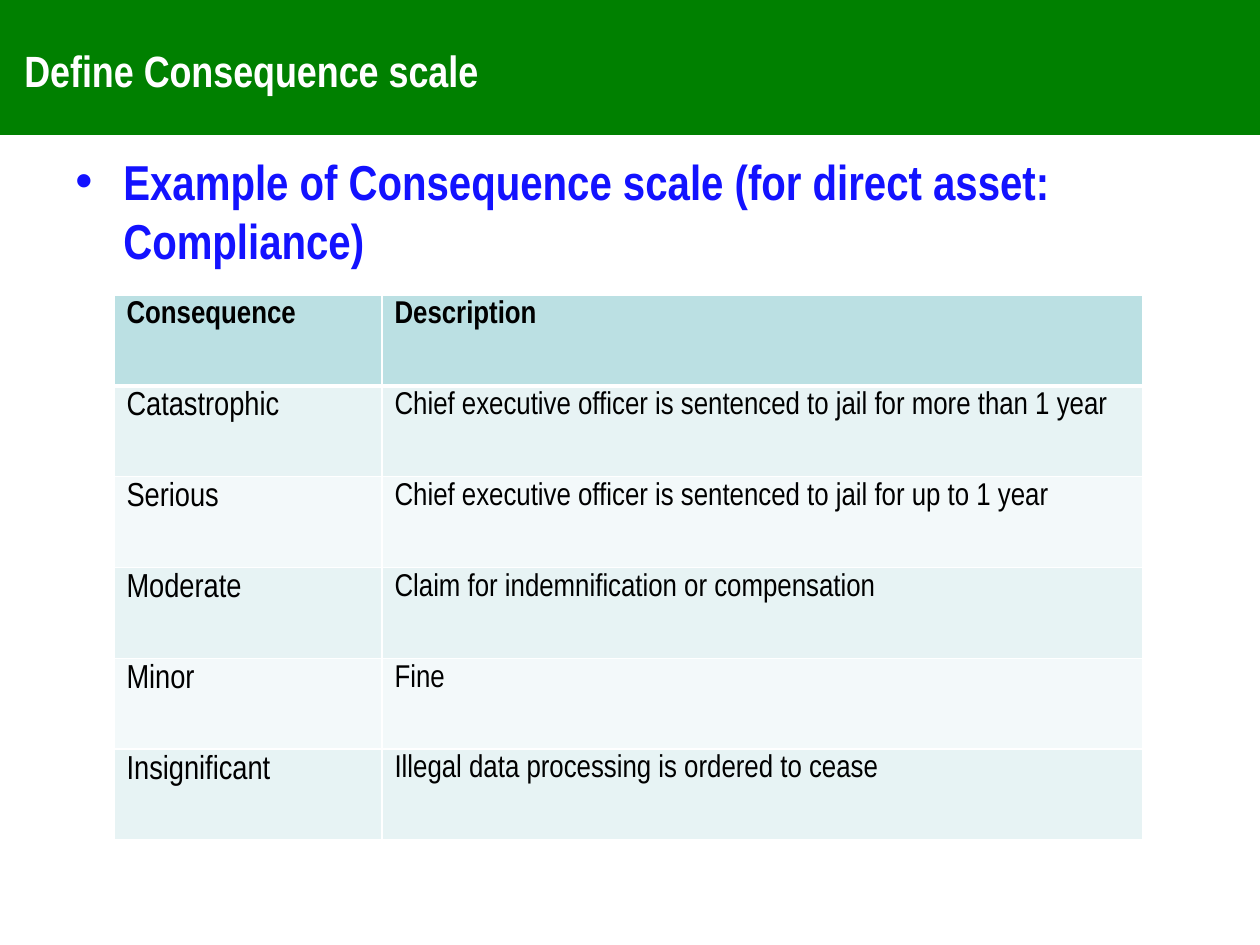
import pptx
import pptx.util
import pptx.dml.color
import pptx.enum.shapes
import pptx.enum.text
import pptx.oxml
import pptx.oxml.ns
from dataclasses import dataclass

SCALE = 914400 / 126


@dataclass(frozen=True)
class Theme:
    font: str = "Arial Narrow"
    green: str = "008000"
    blue: str = "1312FF"
    white: str = "FFFFFF"
    black: str = "000000"
    head: str = "BBE0E3"
    bands: tuple = ("E7F3F4", "F3F9FA")
    title: int = 25
    lead: int = 28
    label: int = 19
    cell: int = 18


THEME = Theme()

ROWS = [
    ("Consequence", "Description"),
    ("Catastrophic", "Chief executive officer is sentenced to jail for more than 1 year"),
    ("Serious", "Chief executive officer is sentenced to jail for up to 1 year"),
    ("Moderate", "Claim for indemnification or compensation"),
    ("Minor", "Fine"),
    ("Insignificant", "Illegal data processing is ordered to cease"),
]


def px(num):
    return pptx.util.Emu(round(num * SCALE))


def rgb(code):
    return pptx.dml.color.RGBColor.from_string(code)


def element(tag, **attrs):
    node = pptx.oxml.parse_xml(f"<a:{tag} {pptx.oxml.ns.nsdecls('a')}/>")
    for key, val in attrs.items():
        node.set(key, str(val))
    return node


def write(frame, text, size, color, bold=False, bullet=None, indent=0):
    para = frame.paragraphs[0]
    para.alignment = pptx.enum.text.PP_ALIGN.LEFT
    if bullet:
        props = para._p.get_or_add_pPr()
        props.set("marL", str(px(indent)))
        props.set("indent", str(-px(indent)))
        props.append(element("buFont", typeface="Arial"))
        props.append(element("buChar", char=bullet))
    run = para.add_run()
    run.text = text
    run.font.name = THEME.font
    run.font.size = pptx.util.Pt(size)
    run.font.bold = bold
    run.font.color.rgb = rgb(color)


def add_text(slide, box, text, anchor, **style):
    frame = slide.shapes.add_textbox(*map(px, box)).text_frame
    frame.word_wrap = True
    frame.vertical_anchor = anchor
    write(frame, text, **style)


def add_header(slide, box, text):
    left, top, wide, high = box
    band = slide.shapes.add_shape(
        pptx.enum.shapes.MSO_SHAPE.RECTANGLE, *map(px, box))
    band.shadow.inherit = False
    band.fill.solid()
    band.fill.fore_color.rgb = rgb(THEME.green)
    band.line.fill.background()
    add_text(slide, (left + 12, top + 31, wide - 126, high - 52), text,
             pptx.enum.text.MSO_ANCHOR.MIDDLE,
             size=THEME.title, color=THEME.white, bold=True)


def add_lead(slide, box, text):
    add_text(slide, box, text, pptx.enum.text.MSO_ANCHOR.TOP,
             size=THEME.lead, color=THEME.blue, bold=True,
             bullet="•", indent=48)


def set_edges(cell, top, bottom):
    props = cell._tc.get_or_add_tcPr()
    widths = {"lnL": 1, "lnR": 1, "lnT": top, "lnB": bottom}
    for spot, (tag, width) in enumerate(widths.items()):
        line = element(tag, w=pptx.util.Pt(width))
        fill = element("solidFill")
        fill.append(element("srgbClr", val=THEME.white))
        line.append(fill)
        props.insert(spot, line)


def add_scale(slide, box, rows, split):
    wide, high = box[2:]
    table = slide.shapes.add_table(len(rows), 2, *map(px, box)).table
    for col, width in zip(table.columns, (split, wide - split)):
        col.width = px(width)
    for r, texts in enumerate(rows):
        table.rows[r].height = px(high / len(rows))
        head = r == 0
        for c, text in enumerate(texts):
            cell = table.cell(r, c)
            cell.margin_top = cell.margin_bottom = px(6)
            cell.vertical_anchor = pptx.enum.text.MSO_ANCHOR.TOP
            cell.fill.solid()
            cell.fill.fore_color.rgb = rgb(
                THEME.head if head else THEME.bands[(r - 1) % 2])
            set_edges(cell, top=3 if r == 1 else 1, bottom=3 if head else 1)
            size = THEME.label if c == 0 and not head else THEME.cell
            write(cell.text_frame, text, size=size,
                  color=THEME.black, bold=head)


def main():
    deck = pptx.Presentation()
    deck.slide_width, deck.slide_height = px(1260), px(945)
    slide = deck.slides.add_slide(deck.slide_layouts[6])
    add_header(slide, (0, -4, 1260, 139), "Define Consequence scale")
    add_lead(slide, (63, 145, 1134, 699),
             "Example of Consequence scale (for direct asset: Compliance)")
    add_scale(slide, (114, 295, 1029, 545), ROWS, split=268)
    deck.save("out.pptx")


if __name__ == "__main__":
    main()
